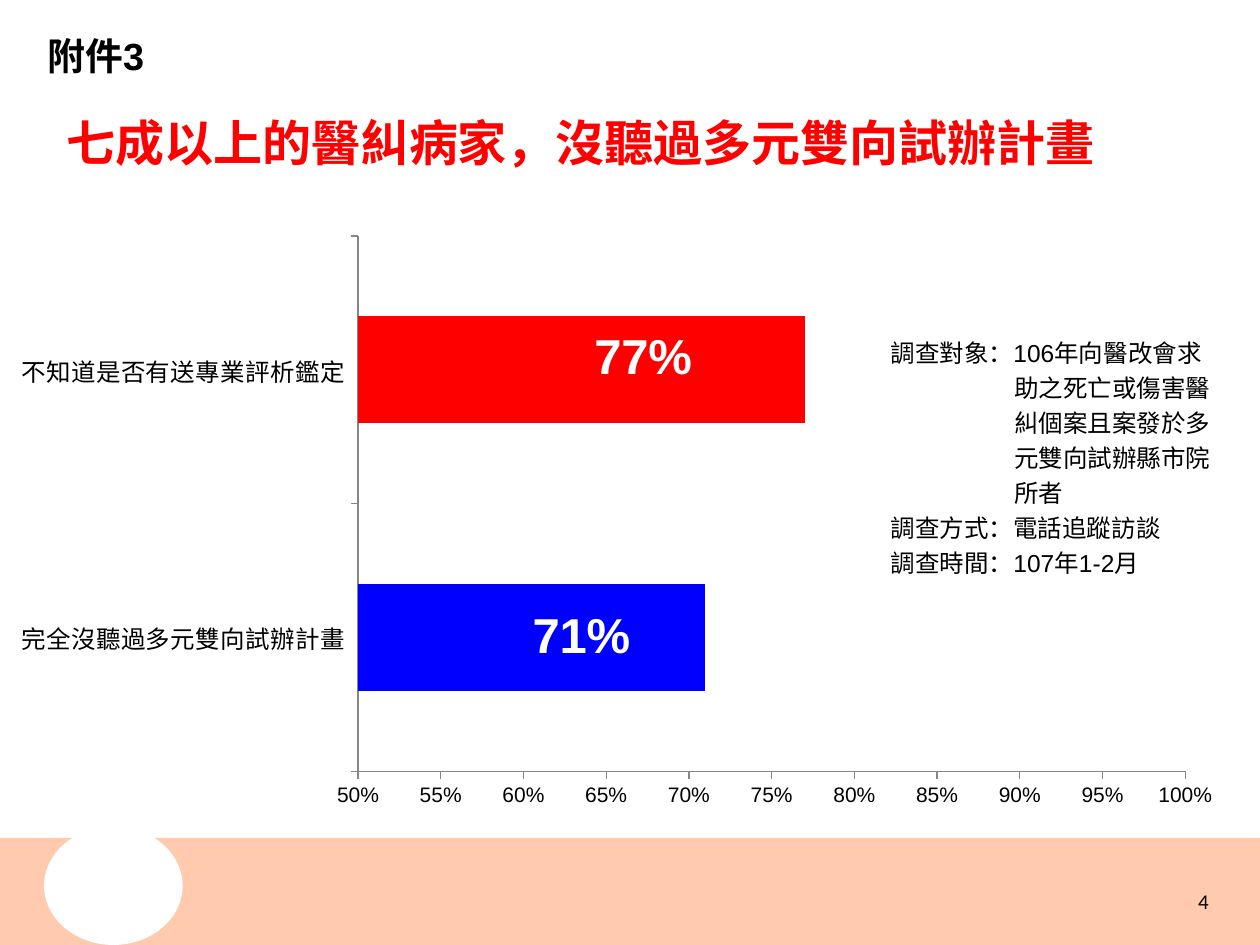
from lxml import etree
from pptx import Presentation
from pptx.chart.data import CategoryChartData
from pptx.dml.color import RGBColor
from pptx.enum import chart as ch, shapes, text
from pptx.oxml.ns import qn
from pptx.util import Inches, Pt

COLORS = {"band": "FFCAAD", "white": "FFFFFF", "black": "000000",
          "red": "FF0000", "blue": "0000FF", "axis": "868686"}
DECOR = [
    (shapes.MSO_SHAPE.RECTANGLE, (0, 6.65, 10, 0.85), "band"),
    (shapes.MSO_SHAPE.OVAL, (0.35, 6.56, 1.1, 0.94), "white"),
]
TOP, MIDDLE = text.MSO_ANCHOR.TOP, text.MSO_ANCHOR.MIDDLE
TEXTS = [
    ("4", (9.41, 6.98, 0.49, 0.35), 12, "Calibri", "black", False, MIDDLE),
    ("七成以上的醫糾病家，沒聽過多元雙向試辦計畫",
     (0.43, 0.84, 9, 1.25), 28, "Arial", "red", True, TOP),
    ("附件3", (0.28, 0.21, 5.04, 0.46), 21.6, "Arial", "black", True, MIDDLE),
]
NOTE_BOX = (6.97, 2.59, 2.83, 2.32)
NOTES = [
    "調查對象：106年向醫改會求助之死亡或傷害醫糾個案且案發於多元雙向試辦縣市院所者",
    "調查方式：電話追蹤訪談",
    "調查時間：107年1-2月",
]
CHART_BOX = (0, 1.78, 9.8, 4.72)
PLOT_AREA = {"x": 0.29, "y": 0.02, "w": 0.67, "h": 0.9}
BARS = [
    ("完全沒聽過多元雙向試辦計畫", 0.71, "blue", {"x": 0.04, "y": 0}),
    ("不知道是否有送專業評析鑑定", 0.77, "red", {"x": 0.05, "y": -0.02}),
]


def rgb(name):
    return RGBColor.from_string(COLORS[name])


def style(font, size, color="black", bold=False, name="Arial"):
    font.size, font.bold, font.name = Pt(size), bold, name
    font.color.rgb = rgb(color)


def add_box(s, box, anchor=TOP):
    tf = s.shapes.add_textbox(*map(Inches, box)).text_frame
    tf.word_wrap = True
    tf.vertical_anchor = anchor
    return tf


def add_run(p, words, *font):
    r = p.add_run()
    r.text = words
    style(r.font, *font)


def manual_layout(values, inner=False):
    layout = etree.Element(qn("c:layout"))
    manual = etree.SubElement(layout, qn("c:manualLayout"))
    settings = dict(values)
    if inner:
        settings = {"layoutTarget": "inner", "xMode": "edge", "yMode": "edge", **values}
    for tag, value in settings.items():
        etree.SubElement(manual, qn("c:" + tag)).set("val", str(value))
    return layout


def add_bar_chart(s):
    data = CategoryChartData(number_format="0%")
    data.categories = [bar[0] for bar in BARS]
    data.add_series("Series 1", [bar[1] for bar in BARS])
    chart = s.shapes.add_chart(ch.XL_CHART_TYPE.BAR_CLUSTERED,
                               *map(Inches, CHART_BOX), data).chart
    style(chart.font, 18)
    chart.has_legend = chart.has_title = False
    for axis, size in ((chart.category_axis, 14), (chart.value_axis, 12)):
        axis.has_major_gridlines = False
        axis.major_tick_mark = ch.XL_TICK_MARK.OUTSIDE
        axis.format.line.color.rgb = rgb("axis")
        style(axis.tick_labels.font, size)
    axis = chart.value_axis
    axis.minimum_scale, axis.maximum_scale, axis.major_unit = 0.5, 1, 0.05
    axis.tick_labels.number_format = "0%"
    axis.tick_labels.number_format_is_linked = False

    plot = chart.plots[0]
    plot.gap_width = 150
    plot.vary_by_categories = False
    series = plot.series[0]
    series.format.fill.solid()
    series.format.fill.fore_color.rgb = rgb("red")
    for i, (_, _, color, _) in enumerate(BARS):
        point = series.points[i]
        point.format.fill.solid()
        point.format.fill.fore_color.rgb = rgb(color)
        style(point.data_label.font, 28, "white", True)
        point.data_label.position = ch.XL_LABEL_POSITION.CENTER
    for label, bar in zip(chart.element.iter(qn("c:dLbl")), BARS):
        label.insert(1, manual_layout(bar[3]))

    area = next(chart.element.iter(qn("c:plotArea")))
    for old in area.findall(qn("c:layout")):
        area.remove(old)
    area.insert(0, manual_layout(PLOT_AREA, inner=True))


def add_notes(s):
    tf = add_box(s, NOTE_BOX)
    for i, words in enumerate(NOTES):
        p = tf.add_paragraph() if i else tf.paragraphs[0]
        p.line_spacing = Pt(20)
        if i == 0:
            pPr = p._p.get_or_add_pPr()
            pPr.set("marL", str(Inches(0.98)))
            pPr.set("indent", str(-Inches(0.98)))
        add_run(p, words, 14)


def main():
    prs = Presentation()
    prs.slide_width, prs.slide_height = Inches(10), Inches(7.5)
    s = prs.slides.add_slide(prs.slide_layouts[6])
    for kind, box, color in DECOR:
        sp = s.shapes.add_shape(kind, *map(Inches, box))
        sp.shadow.inherit = False
        sp.fill.solid()
        sp.fill.fore_color.rgb = rgb(color)
        sp.line.fill.background()
    add_bar_chart(s)
    for words, box, size, name, color, bold, anchor in TEXTS:
        tf = add_box(s, box, anchor)
        add_run(tf.paragraphs[0], words, size, color, bold, name)
    add_notes(s)
    prs.save("out.pptx")


if __name__ == "__main__":
    main()
